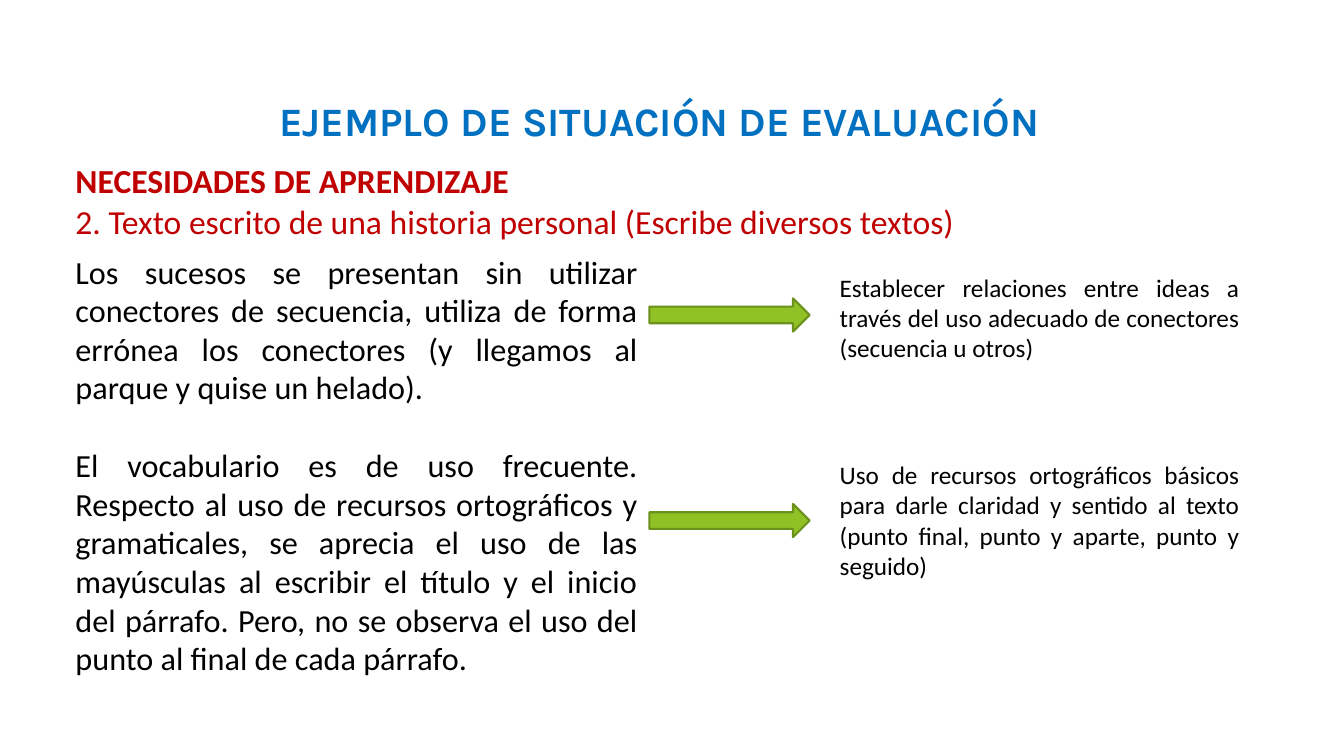
from dataclasses import dataclass

from pptx import Presentation
from pptx.dml.color import RGBColor
from pptx.enum.shapes import MSO_SHAPE
from pptx.enum.text import PP_ALIGN
from pptx.slide import Slide
from pptx.util import Inches, Pt


@dataclass(frozen=True)
class Theme:
    title_font: str = "Karla"
    body_font: str = "Calibri"
    title_color: RGBColor = RGBColor(0x00, 0x70, 0xC0)
    heading_color: RGBColor = RGBColor(0xC0, 0x00, 0x00)
    body_color: RGBColor = RGBColor(0x00, 0x00, 0x00)
    arrow_fill: RGBColor = RGBColor(0x90, 0xC2, 0x26)
    arrow_line: RGBColor = RGBColor(0x6B, 0x90, 0x1C)
    title_size: float = 28.8
    heading_size: float = 24
    finding_size: float = 23
    need_size: float = 18
    arrow_line_width: float = 1.5


@dataclass(frozen=True)
class Box:
    left: float
    top: float
    width: float
    height: float

    def lengths(self) -> tuple[Inches, Inches, Inches, Inches]:
        return (Inches(self.left), Inches(self.top),
                Inches(self.width), Inches(self.height))


@dataclass(frozen=True)
class Need:
    text: str
    text_top: float
    text_height: float
    arrow_top: float


THEME = Theme()

FINDINGS = [
    "Los sucesos se presentan sin utilizar conectores de secuencia, utiliza de "
    "forma errónea los conectores (y llegamos al parque y quise un helado).",
    "El vocabulario es de uso frecuente. Respecto al uso de recursos ortográficos "
    "y gramaticales, se aprecia el uso de las mayúsculas al escribir el título y "
    "el inicio del párrafo. Pero, no se observa el uso del punto al final de cada "
    "párrafo.",
]

NEEDS = [
    Need("Establecer relaciones entre ideas a través del uso adecuado de conectores "
         "(secuencia u otros)", 2.65, 1.01, 2.96),
    Need("Uso de recursos ortográficos básicos para darle claridad y sentido al texto "
         "(punto final, punto y aparte, punto y seguido)", 4.51, 1.31, 5),
]


def add_text(slide: Slide, box: Box, paragraphs: list[str], *, size: float,
             color: RGBColor, font: str = THEME.body_font,
             align: PP_ALIGN = PP_ALIGN.LEFT, bold_first: bool = False,
             gap: float = 0) -> None:
    """Add a text box; gap is the space in points between paragraphs."""
    frame = slide.shapes.add_textbox(*box.lengths()).text_frame
    frame.word_wrap = True
    for index, text in enumerate(paragraphs):
        paragraph = frame.add_paragraph() if index else frame.paragraphs[0]
        paragraph.text = text
        paragraph.alignment = align
        if index and gap:
            paragraph.space_before = Pt(gap)
        paragraph.font.name = font
        paragraph.font.size = Pt(size)
        paragraph.font.color.rgb = color
        paragraph.font.bold = bold_first and index == 0


def add_arrow(slide: Slide, box: Box) -> None:
    arrow = slide.shapes.add_shape(MSO_SHAPE.RIGHT_ARROW, *box.lengths())
    arrow.shadow.inherit = False
    arrow.fill.solid()
    arrow.fill.fore_color.rgb = THEME.arrow_fill
    arrow.line.color.rgb = THEME.arrow_line
    arrow.line.width = Pt(THEME.arrow_line_width)


def main() -> None:
    presentation = Presentation()
    presentation.slide_width = Inches(13.33)
    presentation.slide_height = Inches(7.5)
    slide = presentation.slides.add_slide(presentation.slide_layouts[6])

    add_text(slide, Box(2.67, 0.9, 8.61, 0.58),
             ["EJEMPLO DE SITUACIÓN DE EVALUACIÓN"], size=THEME.title_size,
             color=THEME.title_color, font=THEME.title_font, bold_first=True)
    add_text(slide, Box(0.65, 1.54, 9.15, 0.91),
             ["NECESIDADES DE APRENDIZAJE",
              "2. Texto escrito de una historia personal (Escribe diversos textos)"],
             size=THEME.heading_size, color=THEME.heading_color, bold_first=True)
    add_text(slide, Box(0.65, 2.45, 5.78, 4.36), FINDINGS,
             size=THEME.finding_size, color=THEME.body_color,
             align=PP_ALIGN.JUSTIFY, gap=28)
    for need in NEEDS:
        add_text(slide, Box(8.23, need.text_top, 4.16, need.text_height), [need.text],
                 size=THEME.need_size, color=THEME.body_color, align=PP_ALIGN.JUSTIFY)
        add_arrow(slide, Box(6.44, need.arrow_top, 1.59, 0.33))

    presentation.save("out.pptx")


if __name__ == "__main__":
    main()
